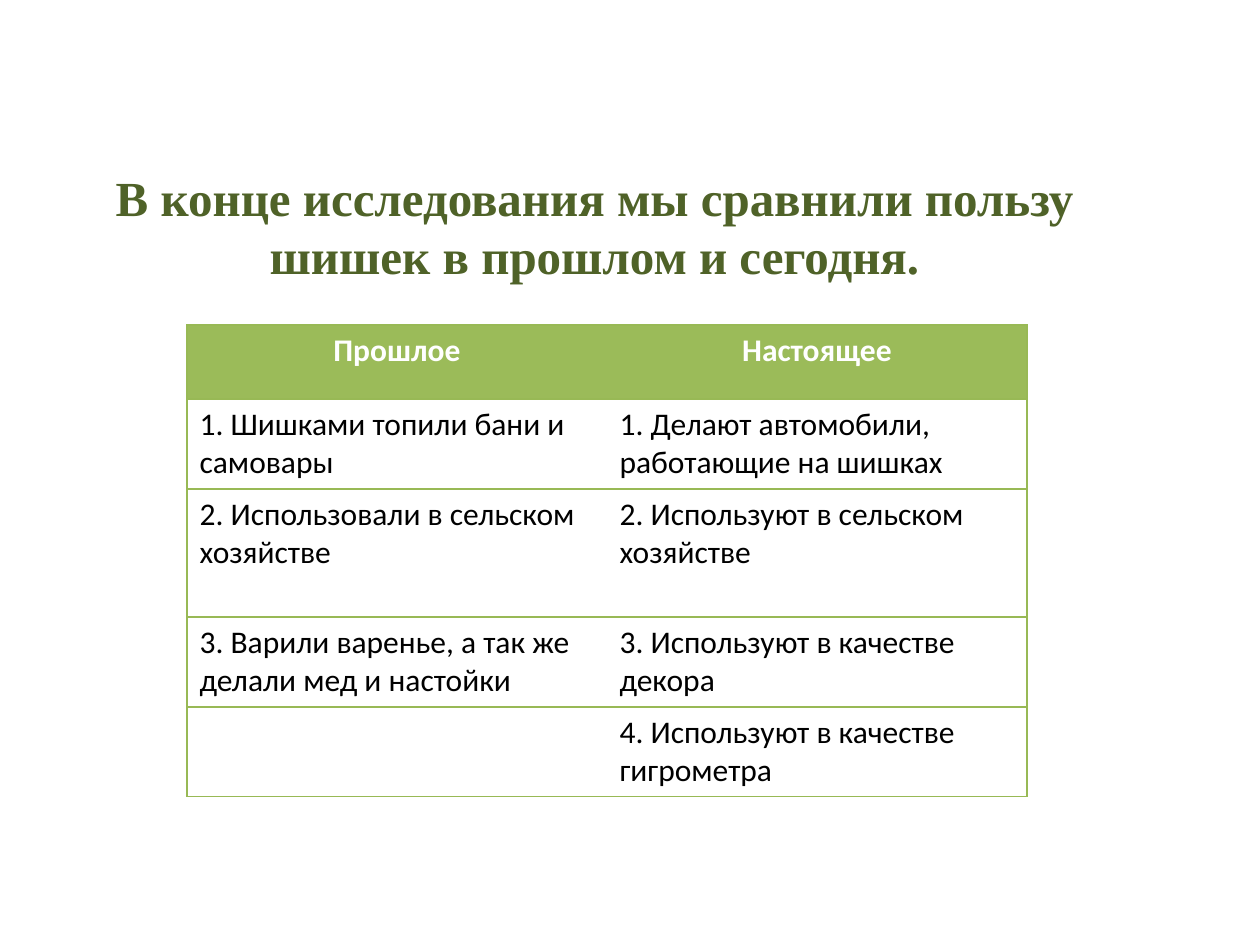
"""Build a slide comparing the uses of pine cones in the past and today."""
import lxml.etree
import pptx
import pptx.dml.color
import pptx.enum.text
import pptx.oxml.ns
import pptx.util

PX = pptx.util.Inches(1) / 126
DARK_GREEN = pptx.dml.color.RGBColor(0x4F, 0x62, 0x28)
HEADER_GREEN = pptx.dml.color.RGBColor(0x9B, 0xBB, 0x59)
RULE_GREEN = pptx.dml.color.RGBColor(0x98, 0xB9, 0x55)
WHITE = pptx.dml.color.RGBColor(0xFF, 0xFF, 0xFF)
BLACK = pptx.dml.color.RGBColor(0, 0, 0)
CENTER = pptx.enum.text.PP_ALIGN.CENTER

USES = [
    ("Прошлое", "Настоящее"),
    ("1. Шишками топили бани и самовары", "1. Делают автомобили, работающие на шишках"),
    ("2. Использовали в сельском хозяйстве", "2. Используют в сельском хозяйстве"),
    ("3. Варили варенье, а так же делали мед и настойки", "3. Используют в качестве декора"),
    ("", "4. Используют в качестве гигрометра"),
]
ROW_HEIGHTS = [74, 90, 128, 90, 90]


def px(*lengths):
    return [round(length * PX) for length in lengths]


def set_border(cell, side, color):
    properties = cell._tc.get_or_add_tcPr()
    line = lxml.etree.SubElement(properties, pptx.oxml.ns.qn(f"a:ln{side}"), w=str(pptx.util.Pt(0.75)))
    if color is None:
        lxml.etree.SubElement(line, pptx.oxml.ns.qn("a:noFill"))
    else:
        fill = lxml.etree.SubElement(line, pptx.oxml.ns.qn("a:solidFill"))
        lxml.etree.SubElement(fill, pptx.oxml.ns.qn("a:srgbClr"), val=str(color))


presentation = pptx.Presentation()
presentation.slide_width, presentation.slide_height = px(1260, 945)
slide = presentation.slides.add_slide(presentation.slide_layouts[5])

title = slide.shapes.title
title.left, title.top, title.width, title.height = px(78, 147, 1033, 158)
title.text_frame.text = "В конце исследования мы сравнили пользу шишек в прошлом и сегодня."
title.text_frame.vertical_anchor = pptx.enum.text.MSO_ANCHOR.MIDDLE
conclusion = title.text_frame.paragraphs[0]
conclusion.alignment = CENTER
conclusion.font.name = "Times New Roman"
conclusion.font.size = pptx.util.Pt(28)
conclusion.font.bold = True
conclusion.font.color.rgb = DARK_GREEN

comparison = slide.shapes.add_table(len(USES), 2, *px(187, 325, 840, sum(ROW_HEIGHTS))).table
comparison.horz_banding = False
for row, (texts, height) in enumerate(zip(USES, ROW_HEIGHTS)):
    comparison.rows[row].height = px(height)[0]
    is_header = row == 0
    for column, text in enumerate(texts):
        cell = comparison.cell(row, column)
        set_border(cell, "L", RULE_GREEN if column == 0 else None)
        set_border(cell, "R", RULE_GREEN if column == 1 else None)
        set_border(cell, "T", RULE_GREEN)
        set_border(cell, "B", RULE_GREEN)
        cell.fill.solid()
        cell.fill.fore_color.rgb = HEADER_GREEN if is_header else WHITE
        cell.text = text
        use = cell.text_frame.paragraphs[0]
        if is_header:
            use.alignment = CENTER
        use.font.name = "Calibri"
        use.font.size = pptx.util.Pt(18)
        use.font.bold = is_header
        use.font.color.rgb = WHITE if is_header else BLACK

presentation.save("out.pptx")
